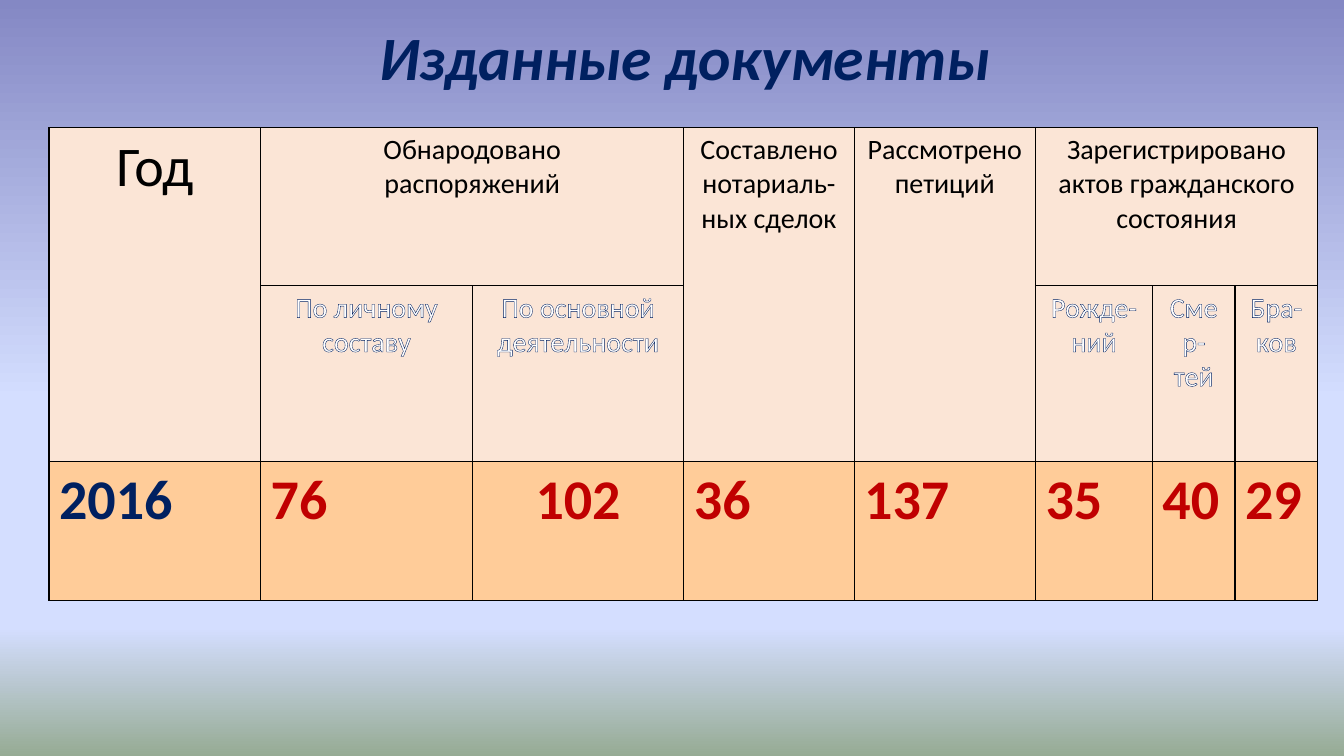
from copy import deepcopy
from dataclasses import dataclass

from lxml.etree import SubElement as add_element
from pptx import Presentation
from pptx.dml.color import RGBColor as Color
from pptx.enum.text import MSO_ANCHOR as Anchor, PP_ALIGN as Align
from pptx.oxml.ns import qn
from pptx.util import Inches, Pt


@dataclass(frozen=True)
class Theme:
    font: str = "Calibri"
    navy: str = "002060"
    red: str = "C00000"
    black: str = "000000"
    white: str = "FFFFFF"
    header_fill: str = "FBE5D6"
    value_fill: str = "FFCC99"
    background: tuple = ((0, "8488C4"), (0.53, "D4DEFF"), (0.83, "D4DEFF"), (1, "96AB94"))
    title_size: int = 44
    large_size: int = 40
    label_size: int = 20
    border_width: float = 1
    outline_width: float = 0.75


THEME = Theme()
WIDTH, HEIGHT = Inches(13.333), Inches(7.5)
TITLE_BOX = (0.272, 0.019, 0.476, 0.112)
TABLE_BOX = (0.0365, 0.169, 0.944, 0.625)
COLUMN_WEIGHTS = (2.1, 2.1, 2.1, 1.69, 1.8, 1.16, 0.82, 0.82)
ROW_WEIGHTS = (1.57, 1.74, 1.38)

GROUP_HEADERS = (
    (0, "Год", 2, 1),
    (1, "Обнародовано\nраспоряжений", 1, 2),
    (3, "Составлено нотариаль-\nных сделок", 2, 1),
    (4, "Рассмотрено петиций", 2, 1),
    (5, "Зарегистрировано актов гражданского состояния", 1, 3),
)
SUBHEADERS = (
    (1, "По личному составу"),
    (2, "По основной деятельности"),
    (5, "Рожде-\nний"),
    (6, "Смер-тей"),
    (7, "Бра-\nков"),
)
VALUES = ("2016", "76", "102", "36", "137", "35", "40", "29")


def scale_box(box):
    left, top, width, height = box
    return int(left * WIDTH), int(top * HEIGHT), int(width * WIDTH), int(height * HEIGHT)


def add_line(parent, tag, width, color):
    line = add_element(parent, qn(tag), w=str(Pt(width)))
    fill = add_element(line, qn("a:solidFill"))
    add_element(fill, qn("a:srgbClr"), val=color)
    return line


def write_text(frame, text, size, color, bold=False, italic=False, align=Align.LEFT, outline=None):
    for index, line in enumerate(text.split("\n")):
        paragraph = frame.add_paragraph() if index else frame.paragraphs[0]
        paragraph.alignment = align
        run = paragraph.add_run()
        run.text = line
        font = run.font
        font.name, font.size = THEME.font, Pt(size)
        font.bold, font.italic = bold, italic
        font.color.rgb = Color.from_string(color)
        if outline:
            properties = run.font._element
            properties.insert(0, add_line(properties, "a:ln", THEME.outline_width, outline))


def paint_background(slide):
    fill = slide.background.fill
    fill.gradient()
    fill.gradient_angle = 270
    stop_list = next(slide.element.iter(qn("a:gsLst")))
    while len(stop_list) < len(THEME.background):
        stop_list.append(deepcopy(stop_list[0]))
    for stop, (position, color) in zip(fill.gradient_stops, THEME.background):
        stop.position = position
        stop.color.rgb = Color.from_string(color)


def add_title(slide, box):
    title = slide.shapes.title
    title.left, title.top, title.width, title.height = scale_box(box)
    frame = title.text_frame
    frame.word_wrap = False
    frame.vertical_anchor = Anchor.TOP
    write_text(frame, "Изданные документы", THEME.title_size, THEME.navy,
               bold=True, italic=True, align=Align.CENTER)


def format_cell(cell, fill):
    properties = cell._tc.get_or_add_tcPr()
    for side in ("L", "R", "T", "B"):
        add_line(properties, f"a:ln{side}", THEME.border_width, THEME.black)
    cell.fill.solid()
    cell.fill.fore_color.rgb = Color.from_string(fill)


def add_documents_table(slide, box):
    left, top, width, height = scale_box(box)
    table = slide.shapes.add_table(
        len(ROW_WEIGHTS), len(COLUMN_WEIGHTS), left, top, width, height).table
    table.first_row = table.horz_banding = False
    for column, weight in zip(table.columns, COLUMN_WEIGHTS):
        column.width = int(width * weight / sum(COLUMN_WEIGHTS))
    for row, weight in zip(table.rows, ROW_WEIGHTS):
        row.height = int(height * weight / sum(ROW_WEIGHTS))
    value_row = len(ROW_WEIGHTS) - 1
    for index, row in enumerate(table.rows):
        for cell in row.cells:
            format_cell(cell, THEME.value_fill if index == value_row else THEME.header_fill)

    for column, text, row_span, column_span in GROUP_HEADERS:
        cell = table.cell(0, column)
        cell.merge(table.cell(row_span - 1, column + column_span - 1))
        size = THEME.label_size if column else THEME.large_size
        write_text(cell.text_frame, text, size, THEME.black,
                   align=Align.CENTER, outline=THEME.navy)
    for column, text in SUBHEADERS:
        write_text(table.cell(1, column).text_frame, text, THEME.label_size, THEME.white,
                   align=Align.CENTER, outline=THEME.navy)
    for column, text in enumerate(VALUES):
        write_text(table.cell(value_row, column).text_frame, text, THEME.large_size,
                   THEME.red if column else THEME.navy, bold=True,
                   align=Align.CENTER if column == 2 else Align.LEFT)


def main():
    presentation = Presentation()
    presentation.slide_width, presentation.slide_height = WIDTH, HEIGHT
    slide = presentation.slides.add_slide(presentation.slide_layouts.get_by_name("Title Only"))
    paint_background(slide)
    add_title(slide, TITLE_BOX)
    add_documents_table(slide, TABLE_BOX)
    presentation.save("out.pptx")


if __name__ == "__main__":
    main()
